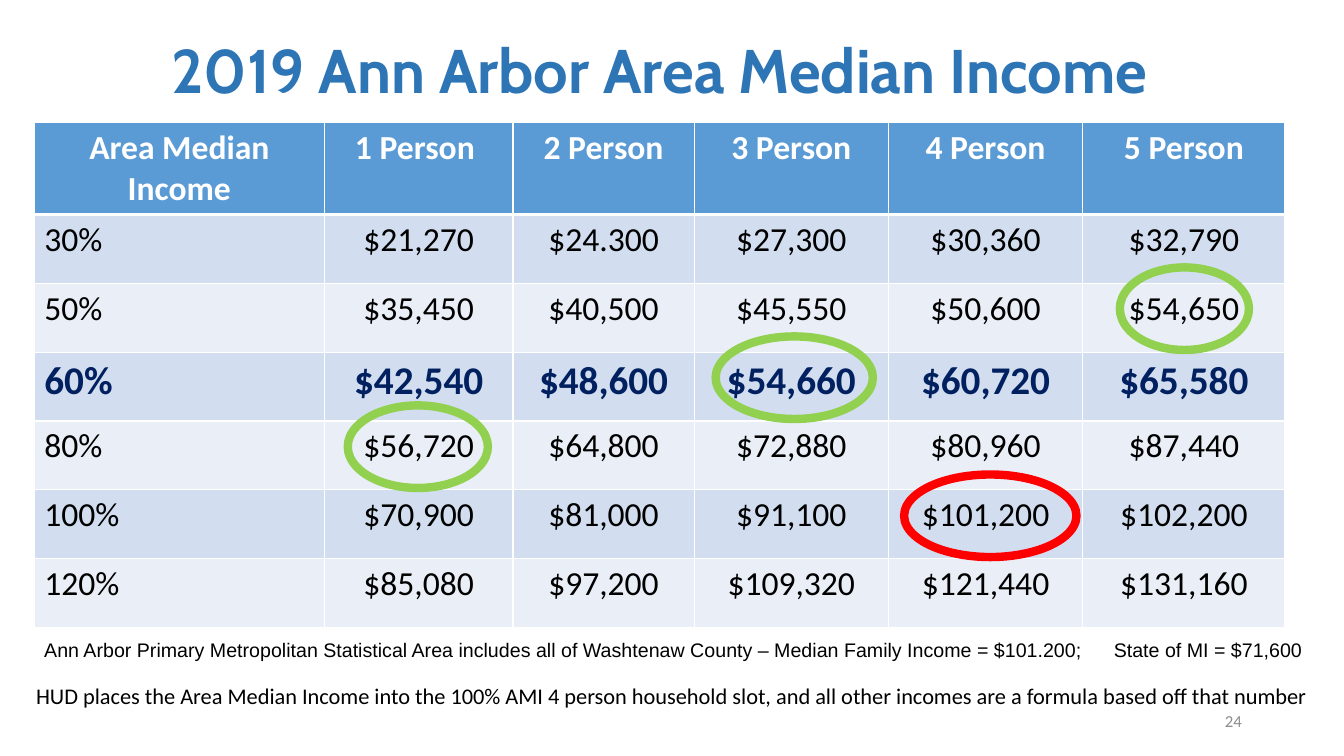
"""Build the 2019 Ann Arbor area median income slide."""
from lxml import etree
from pptx import Presentation
from pptx.dml.color import RGBColor
from pptx.enum import shapes, text
from pptx.oxml import ns
from pptx.util import Pt

WHITE = RGBColor(255, 255, 255)
BLACK = RGBColor(0, 0, 0)
GREY = RGBColor(0x8C, 0x8C, 0x8C)
BLUE = RGBColor(0x2E, 0x75, 0xB6)
NAVY = RGBColor(0, 0x20, 0x60)
HEAD = RGBColor(0x5B, 0x9B, 0xD5)
BANDS = RGBColor(0xEA, 0xEF, 0xF7), RGBColor(0xD2, 0xDE, 0xEF)
GREEN = RGBColor(0x92, 0xD0, 0x50)
RED = RGBColor(255, 0, 0)

LEFT, MID, RIGHT = text.PP_ALIGN.LEFT, text.PP_ALIGN.CENTER, text.PP_ALIGN.RIGHT

TITLE = "2019 Ann Arbor Area Median Income"
ROWS = [
    ["Area Median Income", "1 Person ", "2 Person", "3 Person", "4 Person", "5 Person"],
    ["30%", "$21,270", "$24.300", "$27,300", "$30,360", "$32,790"],
    ["50%", "$35,450", "$40,500", "$45,550", "$50,600", "$54,650"],
    ["60%", "$42,540", "$48,600", "$54,660", "$60,720", "$65,580"],
    ["80%", "$56,720", "$64,800", "$72,880", "$80,960", "$87,440"],
    ["100%", "$70,900", "$81,000", "$91,100", "$101,200", "$102,200"],
    ["120%", "$85,080", "$97,200", "$109,320", "$121,440", "$131,160"],
]
WIDTHS = [207.2, 134.8, 129.4, 138.8, 138.8, 144.5]
ROW_H = 49.2
TABLE = 24.5, 87.4, sum(WIDTHS), 361

HEAD_FONT = {"name": "Calibri", "size": Pt(24), "bold": True, "color": WHITE}
BODY_FONT = HEAD_FONT | {"bold": False, "color": BLACK}
KEY_FONT = {"name": "Calibri", "size": Pt(28), "bold": True, "color": NAVY}
FONTS = {0: HEAD_FONT, 3: KEY_FONT}

RINGS = [(3, 511.2, 112.3, GREEN), (4, 248.4, 100.1, GREEN),
         (2, 799.9, 92.2, GREEN), (5, 645.8, 123.1, RED)]
RING_TOP, RING_STEP, RING_H = 92.4, 49.3, 59

AREA = ("Ann Arbor Primary Metropolitan Statistical Area includes all of Washtenaw "
        "County – Median Family Income = $101.200;\tState of MI = $71,600")
RULE = ("HUD places the Area Median Income into the 100% AMI 4 person household slot, "
        "and all other incomes are a formula based off that number")
AREA_TAB = 764
TOP, CENTRE = text.MSO_ANCHOR.TOP, text.MSO_ANCHOR.MIDDLE
NOTES = [
    ("24", (678.2, 500.4, 216, 28.8), RIGHT, CENTRE, "Calibri", 12, GREY),
    (AREA, (24.5, 452.2, 915.8, 24.5), LEFT, TOP, "Arial", 14, BLACK),
    (RULE, (18.7, 483.8, 927.4, 26.6), LEFT, TOP, "Calibri", 16, BLACK),
]


def write(frame, words, align, font):
    """Fill a text frame with one formatted paragraph."""
    para = frame.paragraphs[0]
    para.alignment = align
    run = para.add_run()
    run.text = words
    for key, val in font.items():
        if key == "color":
            run.font.color.rgb = val
        else:
            setattr(run.font, key, val)
    return para


def edge(cell, row):
    """Give a cell white borders, thick under the header."""
    props = cell._tc.get_or_add_tcPr()
    for spot, side in enumerate("LRTB"):
        thick = (row, side) in [(0, "B"), (1, "T")]
        line = etree.Element(ns.qn(f"a:ln{side}"), w=str(Pt(3 if thick else 1)))
        fill = etree.SubElement(line, ns.qn("a:solidFill"))
        etree.SubElement(fill, ns.qn("a:srgbClr"), val=str(WHITE))
        props.insert(spot, line)


def add_title(slide):
    """Place and format the title."""
    title = slide.shapes.title
    title.left, title.top, title.width, title.height = map(Pt, (24.5, 0, 893.5, 104.4))
    title.text_frame.vertical_anchor = CENTRE
    font = {"name": "Cabin", "size": Pt(44), "bold": True, "color": BLUE}
    write(title.text_frame, TITLE, MID, font).line_spacing = 0.9


def add_grid(slide):
    """Add the income table."""
    frame = slide.shapes.add_table(len(ROWS), len(WIDTHS), *map(Pt, TABLE))
    grid = frame.table
    for col, wide in zip(grid.columns, WIDTHS):
        col.width = Pt(wide)
    for r, row in enumerate(ROWS):
        grid.rows[r].height = Pt(ROW_H)
        for c, words in enumerate(row):
            cell = grid.cell(r, c)
            cell.fill.solid()
            cell.fill.fore_color.rgb = BANDS[r % 2] if r else HEAD
            edge(cell, r)
            align = LEFT if r and not c else MID
            write(cell.text_frame, words, align, FONTS.get(r, BODY_FONT))
    frame.height = Pt(TABLE[3])


def add_rings(slide):
    """Circle the marked incomes."""
    for row, left, wide, color in RINGS:
        box = left, RING_TOP + RING_STEP * row, wide, RING_H
        ring = slide.shapes.add_shape(shapes.MSO_SHAPE.OVAL, *map(Pt, box))
        ring.shadow.inherit = False
        ring.fill.background()
        ring.line.color.rgb = color
        ring.line.width = Pt(6)


def add_notes(slide):
    """Add the page number and the two lines under the table."""
    for words, box, align, anchor, name, size, color in NOTES:
        frame = slide.shapes.add_textbox(*map(Pt, box)).text_frame
        frame.word_wrap = True
        frame.vertical_anchor = anchor
        font = {"name": name, "size": Pt(size), "color": color}
        para = write(frame, words, align, font)
        if "\t" in words:
            tabs = etree.SubElement(para._p.get_or_add_pPr(), ns.qn("a:tabLst"))
            etree.SubElement(tabs, ns.qn("a:tab"), pos=str(Pt(AREA_TAB)), algn="l")


def main():
    """Build and save the slide."""
    deck = Presentation()
    deck.slide_width, deck.slide_height = Pt(960), Pt(540)
    slide = deck.slides.add_slide(deck.slide_layouts[5])
    for add in (add_title, add_grid, add_rings, add_notes):
        add(slide)
    deck.save("out.pptx")


if __name__ == "__main__":
    main()
